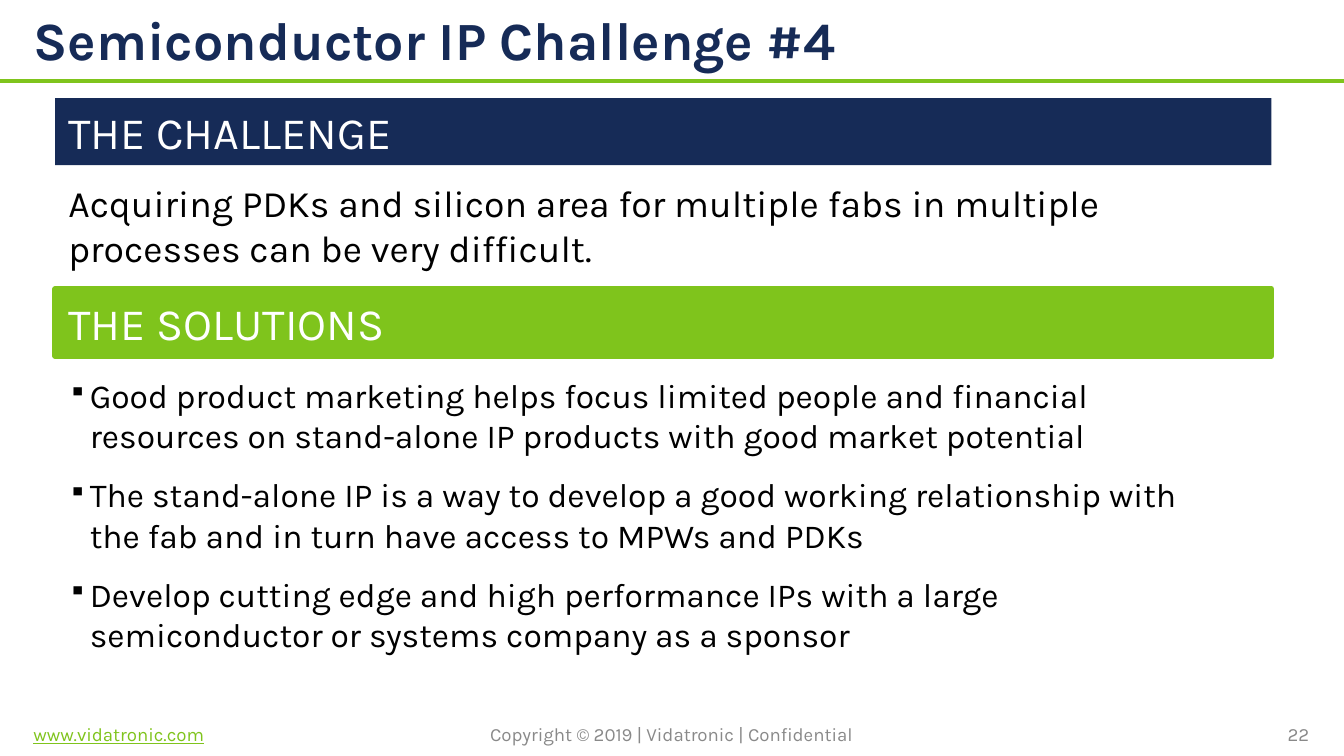
from lxml import etree
from pptx import Presentation
from pptx.dml.color import RGBColor
from pptx.enum.shapes import MSO_CONNECTOR, MSO_SHAPE
from pptx.enum.text import MSO_ANCHOR, MSO_AUTO_SIZE, PP_ALIGN
from pptx.oxml.ns import qn
from pptx.util import Inches, Pt

NAVY = RGBColor(0x16, 0x2B, 0x57)
GREEN = RGBColor(0x7F, 0xC4, 0x1C)
GRAY = RGBColor(0x89, 0x89, 0x89)
BLACK = RGBColor(0, 0, 0)
WHITE = RGBColor(255, 255, 255)
FONT = "Karla"

CHALLENGE = ("Acquiring PDKs and silicon area for\u00a0multiple fabs in multiple "
             "processes can be very difficult.")
SOLUTIONS = [
    "Good product marketing helps focus limited people and financial resources "
    "on stand-alone IP products with good market potential",
    "The stand-alone IP is a way to develop a good working relationship with "
    "the fab and in turn have access to MPWs and PDKs",
    "Develop cutting edge and high performance IPs with a large semiconductor "
    "or systems company as a sponsor",
]


def add_bullet(para, symbol="▪", indent=0.16, percent=75):
    props = para._p.get_or_add_pPr()
    props.set("marL", str(Inches(indent)))
    props.set("indent", str(-Inches(indent)))
    etree.SubElement(props, qn("a:buSzPct")).set("val", str(percent * 1000))
    etree.SubElement(props, qn("a:buChar")).set("char", symbol)


def write_text(shape, lines, size=18, color=BLACK, bold=False, underline=False,
               align=PP_ALIGN.LEFT, anchor=MSO_ANCHOR.TOP, before=0, after=0,
               bullet=False, fit=MSO_AUTO_SIZE.NONE):
    frame = shape.text_frame
    frame.word_wrap = True
    frame.auto_size = fit
    frame.vertical_anchor = anchor
    for index, line in enumerate(lines):
        para = frame.add_paragraph() if index else frame.paragraphs[0]
        para.alignment = align
        para.space_before = Pt(before if index else 0)
        para.space_after = Pt(after)
        if bullet:
            add_bullet(para)
        span = para.add_run()
        span.text = line
        font = span.font
        font.name, font.size, font.bold = FONT, Pt(size), bold
        font.underline = underline
        font.color.rgb = color


def add_text(page, box, lines, **style):
    write_text(page.shapes.add_textbox(*map(Inches, box)), lines, **style)


def add_header(page, box, text):
    left, top, width, height = box
    title = page.shapes.title
    title.left, title.top = Inches(left + 0.15), Inches(top)
    title.width, title.height = Inches(width - 0.62), Inches(height - 0.02)
    write_text(title, [text], size=28.8, color=NAVY, bold=True,
               anchor=MSO_ANCHOR.MIDDLE)
    bottom = Inches(top + height)
    rule = page.shapes.add_connector(MSO_CONNECTOR.STRAIGHT, Inches(left), bottom,
                                     Inches(left + width), bottom)
    rule.line.color.rgb = GREEN
    rule.line.width = Pt(2.25)
    etree.SubElement(rule._element.spPr, qn("a:effectLst"))


def add_section(page, box, heading, lines, color, gap, text_width,
                outlined=False, **style):
    left, top, width, height = box
    bar_height = 0.5
    bar = page.shapes.add_shape(MSO_SHAPE.RECTANGLE, Inches(left), Inches(top),
                                Inches(width), Inches(bar_height))
    bar.shadow.inherit = False
    bar.fill.solid()
    bar.fill.fore_color.rgb = color
    if outlined:
        bar.line.color.rgb = color
        bar.line.width = Pt(3)
    else:
        bar.line.fill.background()
    write_text(bar, [heading], size=24, color=WHITE,
               fit=MSO_AUTO_SIZE.SHAPE_TO_FIT_TEXT)
    offset = bar_height + gap
    add_text(page, (left, top + offset, text_width, height - offset), lines,
             before=6, after=4, **style)


def add_footer(page, box):
    left, top, width, height = box
    part_width = 3.17
    step = (width - part_width) / 2
    parts = [
        ("www.vidatronic.com", GREEN, PP_ALIGN.LEFT, True),
        ("Copyright © 2019 | Vidatronic | Confidential", GRAY, PP_ALIGN.CENTER, False),
        ("22", GRAY, PP_ALIGN.RIGHT, False),
    ]
    for index, (text, color, align, underline) in enumerate(parts):
        add_text(page, (left + index * step, top, part_width, height), [text],
                 size=10, color=color, align=align, underline=underline,
                 anchor=MSO_ANCHOR.MIDDLE)


def main():
    deck = Presentation()
    deck.slide_width = Inches(10)
    deck.slide_height = deck.slide_width * 9 // 16
    page = deck.slides.add_slide(deck.slide_layouts[5])
    add_header(page, (0, 0, 10, 0.6), "Semiconductor IP Challenge #4")
    add_section(page, (0.41, 0.73, 9.05, 1.31), "THE CHALLENGE", [CHALLENGE],
                NAVY, gap=0.06, text_width=9.05, size=20)
    add_section(page, (0.41, 2.15, 9.05, 2.79), "THE SOLUTIONS", SOLUTIONS,
                GREEN, gap=0.09, text_width=8.75, outlined=True, bullet=True)
    add_footer(page, (0.15, 5.36, 9.69, 0.21))
    deck.save("out.pptx")


if __name__ == "__main__":
    main()
